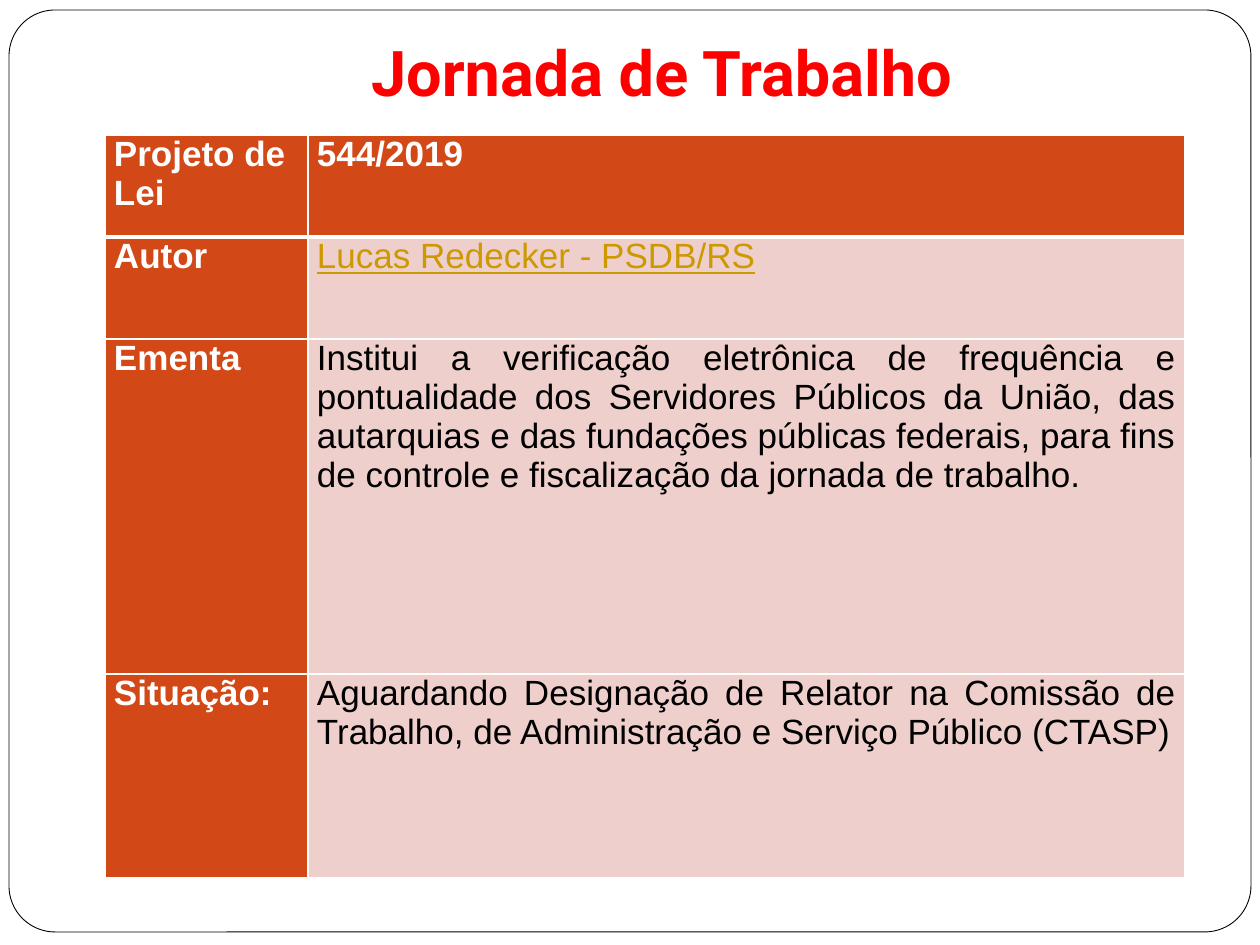
from dataclasses import dataclass

from lxml import etree
from pptx import Presentation
from pptx import util as u
from pptx.dml.color import RGBColor
from pptx.enum import shapes, text
from pptx.oxml.ns import qn

PX_PER_INCH = 126


@dataclass(frozen=True)
class Theme:
    white: str = "FFFFFF"
    black: str = "000000"
    title: str = "FF0000"
    label_fill: str = "D34817"
    value_fill: str = "EFCFCC"
    link: str = "CC9900"
    title_font: str = "Roboto"
    body_font: str = "Arial"
    title_size: int = 36
    body_size: int = 20


THEME = Theme()
LEFT, CENTER, JUSTIFY = (
    text.PP_ALIGN.LEFT, text.PP_ALIGN.CENTER, text.PP_ALIGN.JUSTIFY)
COLUMN_WIDTHS = (203, 877)

# Row height, space after in points, then text and alignment of label and value
ROWS = (
    (102, 0, ("Projeto de Lei", LEFT), ("544/2019", LEFT)),
    (102, 0, ("Autor", JUSTIFY), ("Lucas Redecker - PSDB/RS", JUSTIFY)),
    (335, 0, ("Ementa", LEFT), (
        "Institui a verificação eletrônica de frequência e pontualidade dos "
        "Servidores Públicos da União, das autarquias e das fundações públicas "
        "federais, para fins de controle e fiscalização da jornada de trabalho.",
        JUSTIFY)),
    (204, 6, ("Situação:", LEFT), (
        "Aguardando Designação de Relator na Comissão de Trabalho, de "
        "Administração e Serviço Público (CTASP)", JUSTIFY)),
)


def px(length):
    return u.Emu(round(length * 914400 / PX_PER_INCH))


def set_all(target, values):
    for name, value in values.items():
        setattr(target, name, value)


def write(paragraph, words, color, alignment, **font_values):
    paragraph.alignment = alignment
    run = paragraph.add_run()
    run.text = words
    set_all(run.font, font_values)
    run.font.color.rgb = RGBColor.from_string(color)


def add_title(slide, words):
    title = slide.shapes.title
    set_all(title, {"left": px(126), "top": px(38),
                    "width": px(1071), "height": px(157)})
    frame = title.text_frame
    set_all(frame, {
        "auto_size": text.MSO_AUTO_SIZE.NONE, "word_wrap": True,
        "vertical_anchor": text.MSO_ANCHOR.BOTTOM,
        "margin_left": px(13), "margin_right": px(13),
        "margin_top": px(6), "margin_bottom": px(86)})
    write(frame.paragraphs[0], words, THEME.title, CENTER,
          name=THEME.title_font, size=u.Pt(THEME.title_size), bold=True)


def add_frame(slide):
    """Add the rounded page outline behind the title."""
    frame = slide.shapes.add_shape(
        shapes.MSO_SHAPE.ROUNDED_RECTANGLE, px(9), px(10), px(1242), px(922))
    frame.adjustments[0] = 0.05
    frame.shadow.inherit = False
    frame.fill.solid()
    frame.fill.fore_color.rgb = RGBColor.from_string(THEME.white)
    frame.line.color.rgb = RGBColor.from_string(THEME.black)
    frame.line.width = u.Pt(0.5)
    slide.shapes.title.element.addprevious(frame.element)


def set_borders(cell, widths):
    """Draw white borders; widths gives points by side (L, R, T, B)."""
    properties = cell._tc.get_or_add_tcPr()
    for index, (side, width) in enumerate(widths.items()):
        line = etree.Element(qn(f"a:ln{side}"), w=str(u.Pt(width)))
        fill = etree.SubElement(line, qn("a:solidFill"))
        etree.SubElement(fill, qn("a:srgbClr"), val=THEME.white)
        properties.insert(index, line)


def fill_cell(cell, content, fill, color, space_after, **font_values):
    words, alignment = content
    set_all(cell, {"margin_left": px(9), "margin_right": px(9),
                   "margin_top": 0, "margin_bottom": 0})
    cell.fill.solid()
    cell.fill.fore_color.rgb = RGBColor.from_string(fill)
    paragraph = cell.text_frame.paragraphs[0]
    paragraph.space_after = u.Pt(space_after)
    write(paragraph, words, color, alignment, name=THEME.body_font,
          size=u.Pt(THEME.body_size), **font_values)


def add_bill_table(slide):
    heights = [row[0] for row in ROWS]
    table = slide.shapes.add_table(
        len(ROWS), len(COLUMN_WIDTHS), px(105), px(135),
        px(sum(COLUMN_WIDTHS)), px(sum(heights))).table
    for column, width in zip(table.columns, COLUMN_WIDTHS):
        column.width = px(width)
    for index, (height, space_after, label, value) in enumerate(ROWS):
        table.rows[index].height = px(height)
        is_header, is_author = index == 0, index == 1
        label_cell, value_cell = table.cell(index, 0), table.cell(index, 1)
        fill_cell(label_cell, label, THEME.label_fill, THEME.white,
                  space_after, bold=True)
        if is_header:
            fill, color = THEME.label_fill, THEME.white
        else:
            fill = THEME.value_fill
            color = THEME.link if is_author else THEME.black
        fill_cell(value_cell, value, fill, color, space_after,
                  bold=is_header, underline=is_author)
        for cell in (label_cell, value_cell):
            set_borders(cell, {"L": 1, "R": 1, "T": 3 if is_author else 1,
                               "B": 3 if is_header else 1})


def main():
    presentation = Presentation()
    set_all(presentation, {"slide_width": px(1260), "slide_height": px(945)})
    slide = presentation.slides.add_slide(presentation.slide_layouts[5])
    add_title(slide, "Jornada de Trabalho")
    add_frame(slide)
    add_bill_table(slide)
    presentation.save("out.pptx")


if __name__ == "__main__":
    main()
